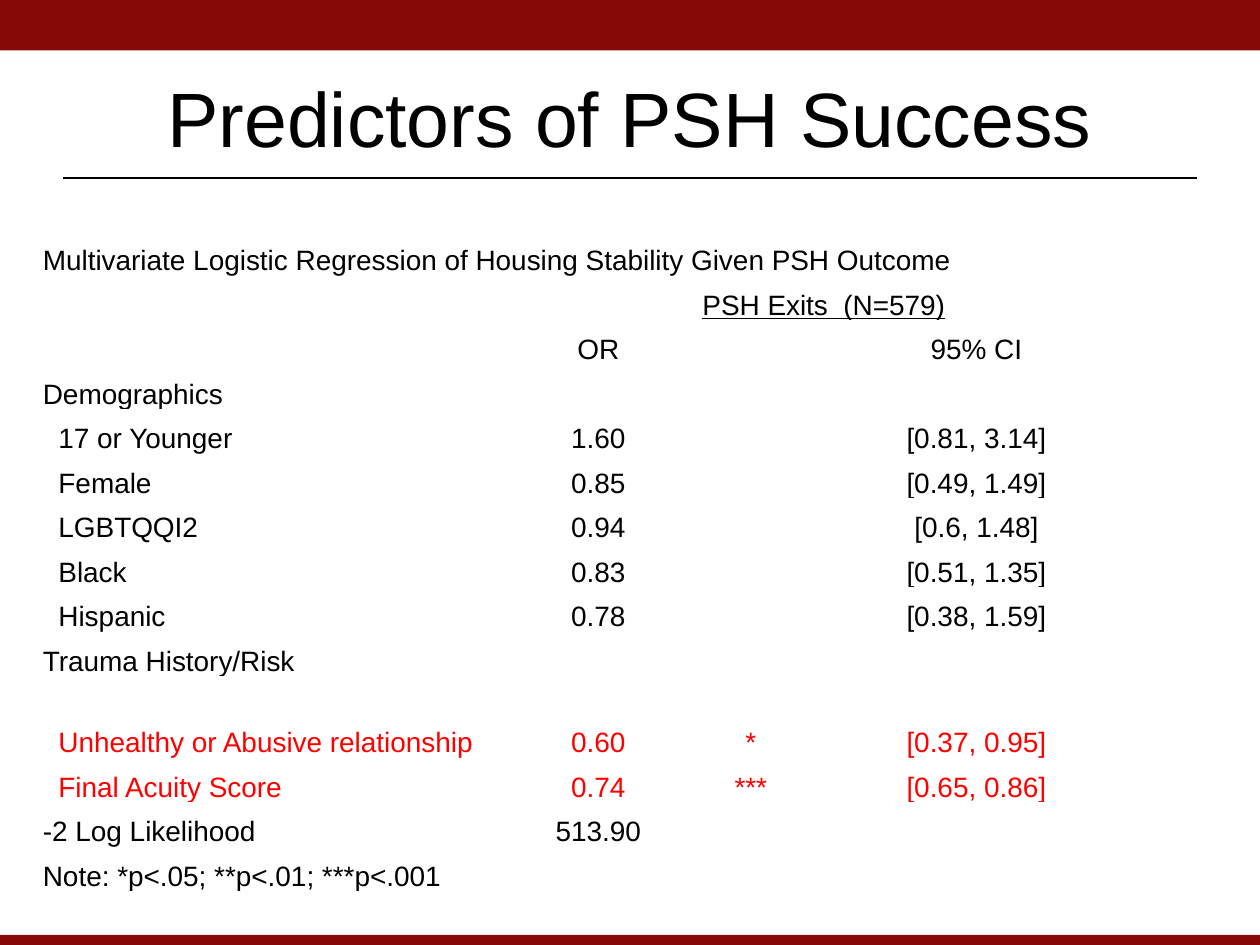
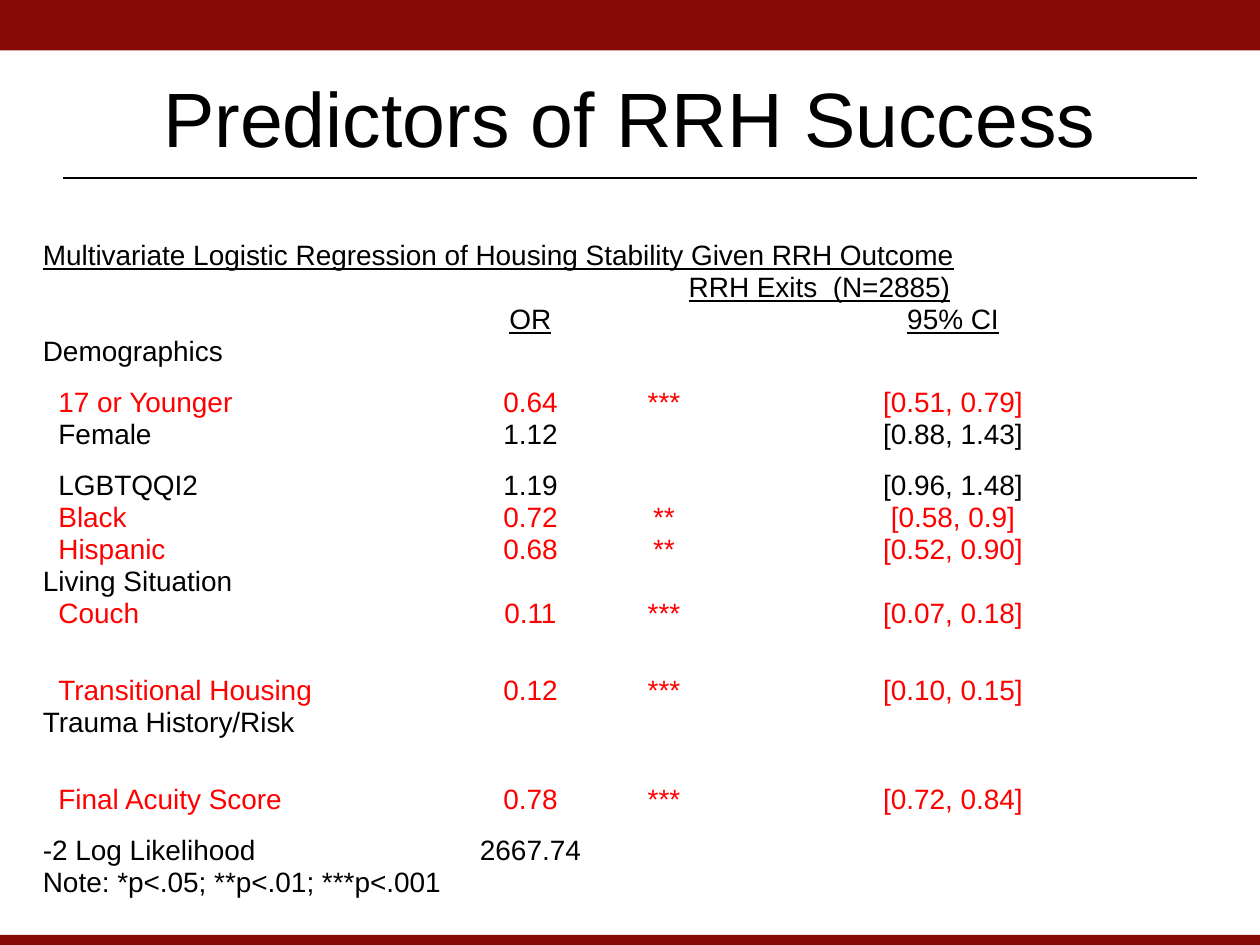
from lxml import etree
from pptx import Presentation
from pptx.dml.color import RGBColor
from pptx.enum.shapes import MSO_CONNECTOR, MSO_SHAPE
from pptx.enum.text import MSO_ANCHOR, MSO_AUTO_SIZE, PP_ALIGN
from pptx.oxml.ns import qn
from pptx.util import Pt

RECT = MSO_SHAPE.RECTANGLE
STRAIGHT = MSO_CONNECTOR.STRAIGHT
LEFT, CENTER = PP_ALIGN.LEFT, PP_ALIGN.CENTER
MIDDLE, BOTTOM = MSO_ANCHOR.MIDDLE, MSO_ANCHOR.BOTTOM
NO_AUTOFIT = MSO_AUTO_SIZE.NONE

COLORS = {"band": "860908", "text": "000000", "significant": "FF0000"}
FONT = "Arial"
WIDTH, HEIGHT = 720, 540
MARGIN = 36
INSET = 0.5
INDENT = 8.9
NOTE = "Note: *p<.05; **p<.01; ***p<.001"


def rgb(name):
    return RGBColor.from_string(COLORS[name])


class Deck:
    def __init__(self):
        self.prs = Presentation()
        self.prs.slide_width, self.prs.slide_height = Pt(WIDTH), Pt(HEIGHT)
        self.s = None

    def new_slide(self, title):
        self.s = self.prs.slides.add_slide(self.prs.slide_layouts[5])
        self.band(0, 28.8)
        self.band(534.24, 5.76)
        self.rule(101.8)
        self.title(title)

    def band(self, top, height):
        sp = self.s.shapes.add_shape(RECT, 0, Pt(top), Pt(WIDTH), Pt(height))
        sp.shadow.inherit = False
        sp.fill.solid()
        sp.fill.fore_color.rgb = rgb("band")
        sp.line.fill.background()

    def rule(self, y):
        line = self.s.shapes.add_connector(
            STRAIGHT, Pt(MARGIN), Pt(y), Pt(WIDTH - MARGIN), Pt(y))
        line.line.color.rgb = rgb("text")
        line.line.width = Pt(1.25)
        etree.SubElement(line._element.spPr, qn("a:effectLst"))

    def title(self, text):
        sp = self.s.shapes.title
        sp.left, sp.top = Pt(MARGIN), Pt(21.6)
        sp.width, sp.height = Pt(WIDTH - 2 * MARGIN), Pt(90)
        tf = sp.text_frame
        tf.text = text
        tf.auto_size = NO_AUTOFIT
        tf.vertical_anchor = MIDDLE
        self.style(tf.paragraphs[0], 44, CENTER)

    def style(self, p, size, align, color="text", underline=None):
        p.alignment = align
        p.font.name, p.font.size = FONT, Pt(size)
        p.font.color.rgb = rgb(color)
        p.font.underline = underline

    def cell(self, cell, text, align, indent, color, underline):
        cell.fill.background()
        cell.vertical_anchor = BOTTOM
        cell.margin_left = Pt(INSET + indent)
        cell.margin_top = cell.margin_right = Pt(INSET)
        cell.margin_bottom = 0
        cell.text = text
        self.style(cell.text_frame.paragraphs[0], 16, align, color, underline)

    def regression_table(self, top, widths, rows, row_height, tall_rows,
                         underlined, category_span):
        last = len(rows) - 1
        heights = [tall_rows.get(i, row_height) for i in range(len(rows))]
        table = self.s.shapes.add_table(
            len(rows), len(widths), Pt(24), Pt(top),
            Pt(sum(widths)), Pt(sum(heights))).table
        table.first_row = table.horz_banding = False
        for column, width in zip(table.columns, widths):
            column.width = Pt(width)

        for i, values in enumerate(rows):
            table.rows[i].height = Pt(heights[i])
            label, odds, stars, interval = values
            predictor = bool(label and interval)
            color = "significant" if stars else "text"
            for j, text in enumerate(values):
                self.cell(table.cell(i, j), text, CENTER if j else LEFT,
                          INDENT if predictor and j == 0 else 0,
                          color, True if i in underlined else None)
            # Merged cells
            if i in (0, last):
                table.cell(i, 0).merge(table.cell(i, 3))
            elif i == 1:
                table.cell(i, 1).merge(table.cell(i, 3))
            elif not odds and category_span > 1:
                table.cell(i, 0).merge(table.cell(i, category_span - 1))


def regression_rows(program, count, body, likelihood):
    caption = ("Multivariate Logistic Regression of Housing Stability "
               f"Given {program} Outcome")
    return [
        (caption, "", "", ""),
        ("", f"{program} Exits  (N={count})", "", ""),
        ("", "OR", "", "95% CI"),
        *body,
        ("-2 Log Likelihood", likelihood, "", ""),
        (NOTE, "", "", ""),
    ]


def category(label):
    return (label, "", "", "")


# Table data
PSH = [
    category("Demographics"),
    ("17 or Younger", "1.60", "", "[0.81, 3.14]"),
    ("Female", "0.85", "", "[0.49, 1.49]"),
    ("LGBTQQI2", "0.94", "", "[0.6, 1.48]"),
    ("Black", "0.83", "", "[0.51, 1.35]"),
    ("Hispanic", "0.78", "", "[0.38, 1.59]"),
    category("Trauma History/Risk"),
    ("Unhealthy or Abusive relationship", "0.60", "*", "[0.37, 0.95]"),
    ("Final Acuity Score", "0.74", "***", "[0.65, 0.86]"),
]

RRH = [
    category("Demographics"),
    ("17 or Younger", "0.64", "***", "[0.51, 0.79]"),
    ("Female", "1.12", "", "[0.88, 1.43]"),
    ("LGBTQQI2", "1.19", "", "[0.96, 1.48]"),
    ("Black", "0.72", "**", "[0.58, 0.9]"),
    ("Hispanic", "0.68", "**", "[0.52, 0.90]"),
    category("Living Situation"),
    ("Couch", "0.11", "***", "[0.07, 0.18]"),
    ("Transitional Housing", "0.12", "***", "[0.10, 0.15]"),
    category("Trauma History/Risk"),
    ("Final Acuity Score", "0.78", "***", "[0.72, 0.84]"),
]


def main():
    deck = Deck()

    # PSH slide
    deck.new_slide("Predictors of PSH Success")
    deck.regression_table(
        111.6, [252, 131.8, 42.5, 215.3],
        regression_rows("PSH", 579, PSH, "513.90"),
        row_height=25.45, tall_rows={0: 46.5, 10: 46.5},
        underlined={1}, category_span=1)

    # RRH slide
    deck.new_slide("Predictors of RRH Success")
    deck.regression_table(
        126, [228, 102.2, 50.4, 280],
        regression_rows("RRH", 2885, RRH, "2667.74"),
        row_height=18.3,
        tall_rows={0: 29.2, 4: 29.2, 6: 29.2, 11: 44, 13: 44, 14: 29.2},
        underlined={0, 1, 2}, category_span=2)

    deck.prs.save("out.pptx")


if __name__ == "__main__":
    main()
